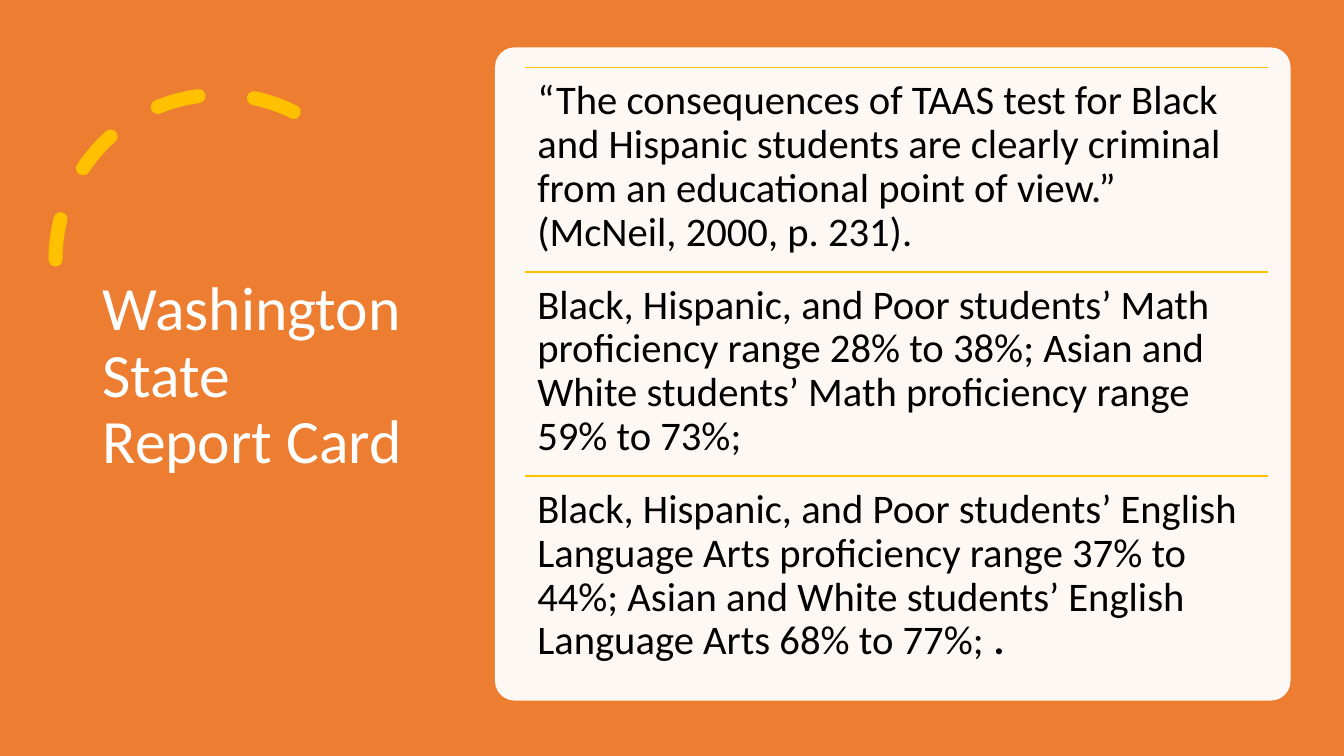
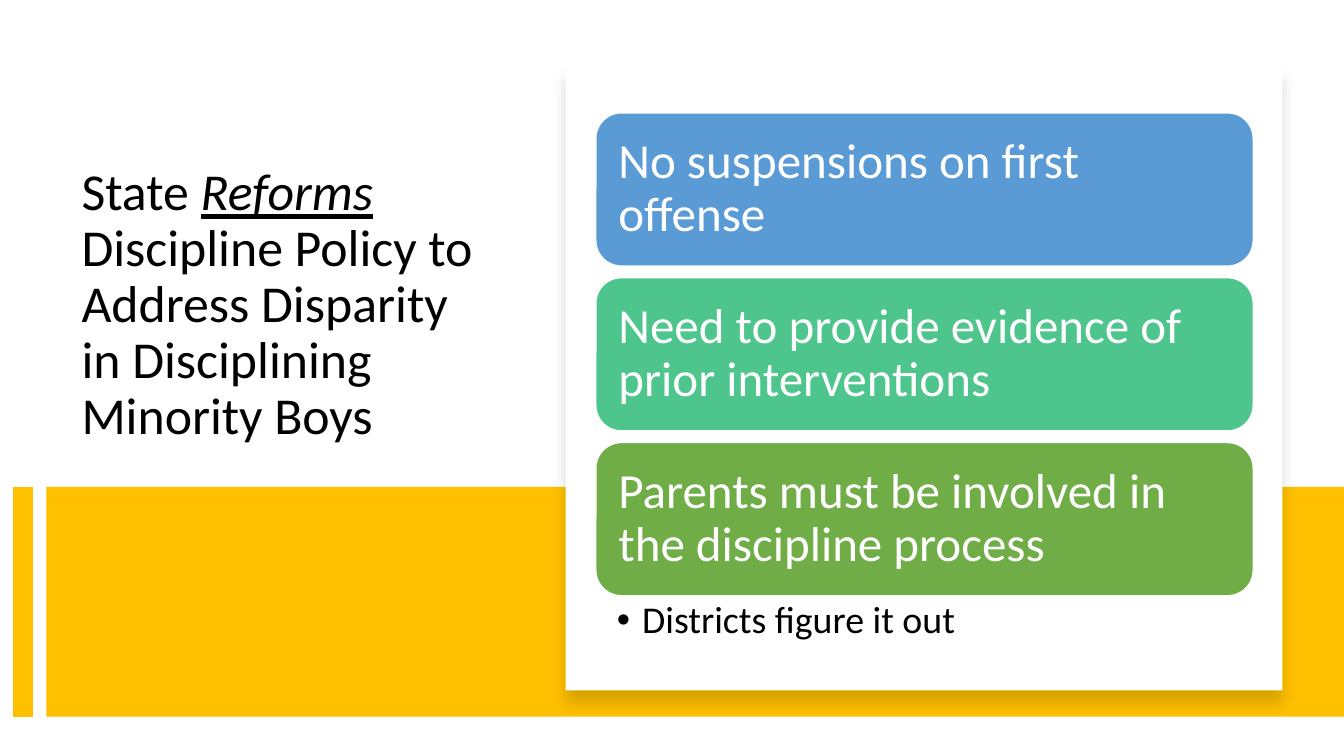
from dataclasses import dataclass

from lxml.etree import SubElement
from pptx import Presentation
from pptx.dml.color import RGBColor
from pptx.enum.dml import MSO_LINE
from pptx.enum.shapes import MSO_CONNECTOR, MSO_SHAPE
from pptx.enum.text import MSO_ANCHOR, PP_ALIGN
from pptx.oxml.ns import qn
from pptx.util import Inches, Pt

COLORS = {
    "orange": "ED7D31",
    "gold": "FFC000",
    "white": "FFFFFF",
    "black": "000000",
    "blue": "5B9BD5",
    "teal": "4DC58D",
    "green": "70AD47",
}
FONT = "Calibri"
LINE_SPACING = 0.9
TEXT_MARGINS = (0.1, 0.05, 0.1, 0.05)


@dataclass
class Box:
    left: int
    top: int
    width: int
    height: int

    def percent(self, left, top, width, height):
        return Box(
            round(self.left + self.width * left / 100),
            round(self.top + self.height * top / 100),
            round(self.width * width / 100),
            round(self.height * height / 100),
        )

    def bounds(self):
        return self.left, self.top, self.width, self.height


PAGE = Box(0, 0, Inches(13.33), Inches(7.5))


def color(name):
    return RGBColor.from_string(COLORS[name])


def add_block(slide, box, fill, kind=MSO_SHAPE.RECTANGLE, outline=None):
    shape = slide.shapes.add_shape(kind, *box.bounds())
    shape.shadow.inherit = False
    shape.fill.solid()
    shape.fill.fore_color.rgb = color(fill)
    if outline:
        shape.line.color.rgb = color(outline)
        shape.line.width = Pt(1)
    else:
        shape.line.fill.background()
    return shape


def add_line(slide, start, end, width):
    line = slide.shapes.add_connector(MSO_CONNECTOR.STRAIGHT, *start, *end)
    line.line.color.rgb = color("gold")
    line.line.width = Pt(width)
    SubElement(line._element.spPr, qn("a:effectLst"))


def write_text(shape, runs, size, ink, anchor=MSO_ANCHOR.TOP, margins=TEXT_MARGINS):
    frame = shape.text_frame
    frame.word_wrap = True
    frame.vertical_anchor = anchor
    (frame.margin_left, frame.margin_top,
     frame.margin_right, frame.margin_bottom) = map(Inches, margins)
    paragraph = frame.paragraphs[0]
    paragraph.alignment = PP_ALIGN.LEFT
    paragraph.line_spacing = LINE_SPACING
    for text, style in runs:
        run = paragraph.add_run()
        run.text = text
        run.font.name = FONT
        run.font.size = Pt(size)
        run.font.color.rgb = color(ink)
        run.font.bold = "bold" in style
        run.font.italic = "italic" in style
        run.font.underline = "underline" in style
    return paragraph


def add_text(slide, box, *arguments, **options):
    return write_text(slide.shapes.add_textbox(*box.bounds()), *arguments, **options)


def add_dashed_arc(slide, box):
    arc = slide.shapes.add_shape(MSO_SHAPE.ARC, *box.bounds())
    arc.shadow.inherit = False
    arc.adjustments[0] = 146.13
    arc.adjustments[1] = 0
    arc.fill.background()
    arc.line.color.rgb = color("gold")
    arc.line.width = Pt(10)
    arc.line.dash_style = MSO_LINE.DASH
    properties = arc._element.spPr
    properties.find(qn("a:ln")).set("cap", "rnd")
    properties.find(qn("a:xfrm")).set("flipH", "1")


def add_ruled_panel(slide, box, rows):
    panel = add_block(slide, box, "white", MSO_SHAPE.ROUNDED_RECTANGLE)
    panel.adjustments[0] = 0.03
    SubElement(panel._element.spPr.find(".//" + qn("a:srgbClr")), qn("a:alpha"), val="95000")
    content = box.percent(3.8, 3.09, 93.41, 93.83)
    row_height = 100 / len(rows)
    for index, runs in enumerate(rows):
        row = content.percent(0, index * row_height, 100, row_height)
        add_line(slide, (row.left, row.top), (row.left + row.width, row.top), 1)
        add_text(slide, row, runs, 29, "black", margins=(0.12,) * 4)


def add_gold_band(slide, box):
    add_block(slide, box.percent(3.45, 0, 96.55, 100), "gold")
    bar = box.percent(1.73, 0, 0, 100)
    add_line(slide, (bar.left, bar.top), (bar.left, bar.top + bar.height), 14)


def add_raised_card(slide, box):
    card = add_block(slide, box, "white")
    effects = card._element.spPr.find(qn("a:effectLst"))
    shadow = SubElement(effects, qn("a:outerShdw"), blurRad=str(Pt(11)), dist=str(Pt(10)),
                        dir="5400000", algn="t", rotWithShape="0")
    shade = SubElement(shadow, qn("a:srgbClr"), val=COLORS["black"])
    SubElement(shade, qn("a:alpha"), val="15000")


def add_reform_stack(slide, box, reforms, note):
    first_top, pitch, height = 7.73, 26.33, 24.48
    for index, (text, fill) in enumerate(reforms):
        tile = add_block(slide, box.percent(4.22, first_top + index * pitch, 91.7, height),
                         fill, MSO_SHAPE.ROUNDED_RECTANGLE, "white")
        write_text(tile, [(text, ())], 35, "white", MSO_ANCHOR.MIDDLE, (0.15,) * 4)
    note_top = first_top + (len(reforms) - 1) * pitch + height
    paragraph = add_text(slide, box.percent(4.22, note_top, 91.7, 10.14), [(note, ())],
                         27, "black", margins=(0.21, 0.05, 0.27, 0.05))
    properties = paragraph._p.get_or_add_pPr()
    properties.set("marL", str(Inches(0.25)))
    properties.set("indent", str(-Inches(0.25)))
    SubElement(properties, qn("a:buFont"), typeface="Arial")
    SubElement(properties, qn("a:buChar"), char="•")


def build_report_card(slide, page):
    add_block(slide, page, "orange")
    add_dashed_arc(slide, page.percent(4.13, 12.53, 24.53, 43.6))
    add_text(slide, page.percent(6.9, 9.33, 24.23, 81.2),
             [("Washington State Report Card", ())], 44, "white", anchor=MSO_ANCHOR.MIDDLE)
    add_ruled_panel(slide, page.percent(36.83, 6.27, 59.19, 86.4), [
        [("“The consequences of TAAS test for Black and Hispanic students are clearly "
          "criminal from an educational point of view.” (McNeil, 2000, p. 231).", ())],
        [("Black, Hispanic, and Poor students’ Math proficiency range 28% to 38%; "
          "Asian and White students’ Math proficiency range 59% to 73%;", ())],
        [("Black, Hispanic, and Poor students’ English Language Arts proficiency range "
          "37% to 44%; Asian and White students’ English Language Arts 68% to 77%; ", ()),
         (".", ("bold",))],
    ])


def build_reforms(slide, page):
    add_text(slide, page.percent(5.33, 21.33, 31.13, 39.2), [
        ("State ", ()),
        ("Reforms", ("italic", "underline")),
        (" Discipline Policy to Address Disparity in Disciplining Minority Boys", ()),
    ], 37, "black")
    add_gold_band(slide, page.percent(0, 64.4, 100, 30.4))
    card = page.percent(42.08, 8.53, 53.34, 82.8)
    add_raised_card(slide, card)
    add_reform_stack(slide, card, [
        ("No suspensions on first offense", "blue"),
        ("Need to provide evidence of prior interventions", "teal"),
        ("Parents must be involved in the discipline process", "green"),
    ], "Districts figure it out")


def main():
    presentation = Presentation()
    presentation.slide_width = PAGE.width
    presentation.slide_height = PAGE.height
    for build in (build_report_card, build_reforms):
        build(presentation.slides.add_slide(presentation.slide_layouts[6]), PAGE)
    presentation.save("out.pptx")


if __name__ == "__main__":
    main()
